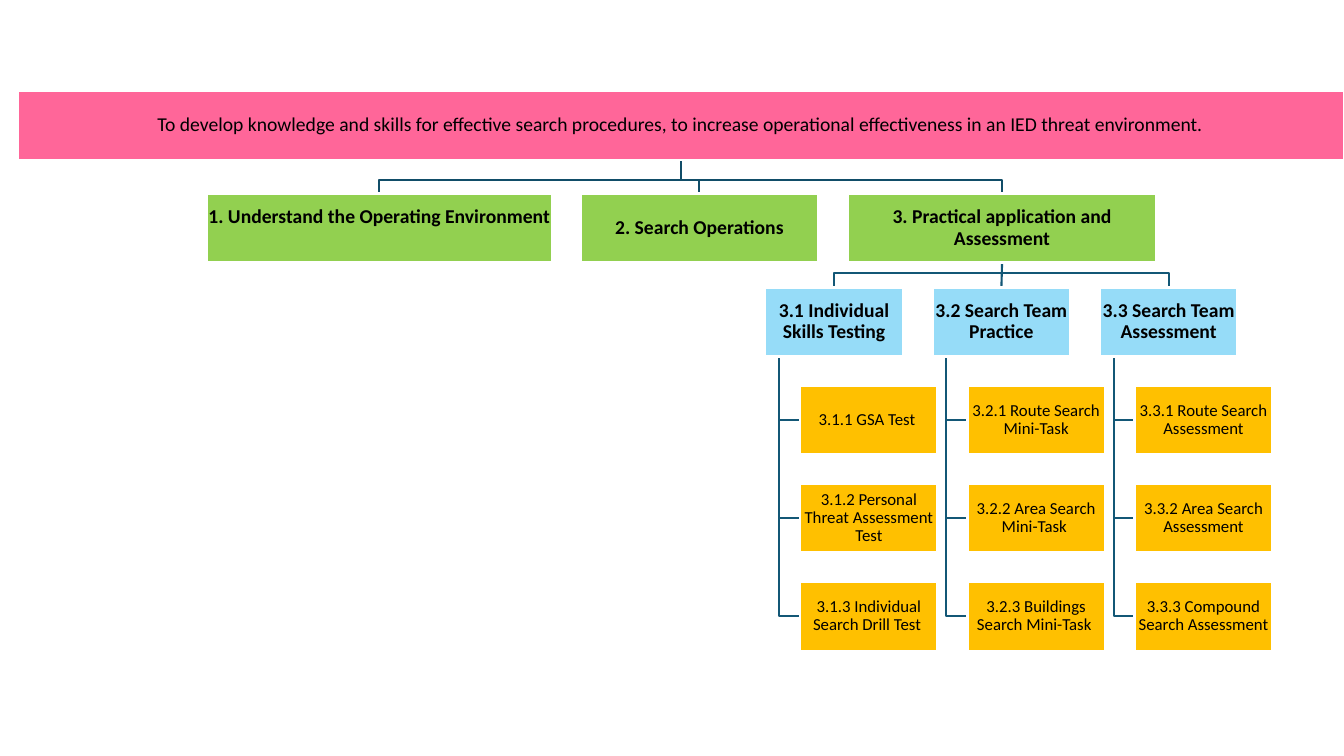
from dataclasses import dataclass, field

from lxml.etree import SubElement
from pptx import Presentation
from pptx.dml.color import RGBColor
from pptx.enum.shapes import MSO_CONNECTOR, MSO_SHAPE
from pptx.enum.text import MSO_ANCHOR, PP_ALIGN
from pptx.oxml.ns import qn
from pptx.slide import Slide
from pptx.util import Pt

COLOURS = {
    "aim": "FF6699",
    "module": "92D050",
    "unit": "96DCF8",
    "task": "FFC000",
    "border": "FFFFFF",
    "text": "000000",
    "module_link": "114D68",
    "unit_link": "135776",
}
BOX_HEIGHT = 49.5
MODULE_TOP = 138.3
UNIT_TOP = 205.2
UNIT_LEFT = 546.5
UNIT_PITCH = 119.5
UNIT_WIDTH = 98.6
TASK_PITCH = 70.1
TASK_INDENT = 24.9
STEM_INDENT = 10
INSET = 0.7

Point = tuple[float, float]


@dataclass
class Node:
    text: str
    level: str
    left: float
    top: float
    width: float
    size: float = 14
    bold: bool = True
    lift: float = 0
    children: list["Node"] = field(default_factory=list)

    @property
    def centre(self) -> float:
        return self.left + self.width / 2

    @property
    def bottom(self) -> float:
        return self.top + BOX_HEIGHT


UNITS = [
    ("3.1 Individual Skills Testing", [
        "3.1.1 GSA Test ",
        "3.1.2 Personal Threat Assessment Test",
        "3.1.3 Individual Search Drill Test ",
    ]),
    ("3.2 Search Team Practice", [
        "3.2.1 Route Search Mini-Task",
        "3.2.2 Area Search Mini-Task ",
        "3.2.3 Buildings Search Mini-Task ",
    ]),
    ("3.3 Search Team Assessment", [
        "3.3.1 Route Search Assessment",
        "3.3.2 Area Search Assessment",
        "3.3.3 Compound Search Assessment",
    ]),
]


def build_unit(column: int, title: str, tasks: list[str]) -> Node:
    left = UNIT_LEFT + column * UNIT_PITCH
    return Node(title, "unit", left, UNIT_TOP, UNIT_WIDTH, children=[
        Node(task, "task", left + TASK_INDENT, UNIT_TOP + row * TASK_PITCH,
             UNIT_WIDTH, size=12, bold=False)
        for row, task in enumerate(tasks, start=1)
    ])


def build_tree() -> Node:
    units = [build_unit(column, *unit) for column, unit in enumerate(UNITS)]
    modules = [
        Node("1. Understand the Operating Environment", "module",
             147.3, MODULE_TOP, 247.4, lift=15.5),
        Node("2. Search Operations", "module", 414.7, MODULE_TOP, 169.9),
        Node("3. Practical application and Assessment", "module",
             605.4, MODULE_TOP, 220.8, children=units),
    ]
    aim = ("To develop knowledge and skills for effective search procedures, "
           "to increase operational effectiveness in an IED threat environment.")
    return Node(aim, "aim", 12.4, 64.8, 947.6, bold=False, children=modules)


def link_points(parent: Node, child: Node) -> list[Point]:
    """Route from a parent to its child: side stem for tasks, elbow otherwise."""
    if child.level == "task":
        stem = parent.left + STEM_INDENT
        middle = child.top + BOX_HEIGHT / 2
        return [(stem, parent.bottom), (stem, middle), (child.left, middle)]
    start, end = (parent.centre, parent.bottom), (child.centre, child.top)
    if abs(start[0] - end[0]) < 1:
        return [start, end]
    bend = child.top - 10
    return [start, (start[0], bend), (end[0], bend), end]


def draw_link(page: Slide, parent: Node, child: Node) -> None:
    points = [(Pt(x), Pt(y)) for x, y in link_points(parent, child)]
    if len(points) == 2:
        link = page.shapes.add_connector(
            MSO_CONNECTOR.STRAIGHT, *points[0], *points[1])
    else:
        builder = page.shapes.build_freeform(*points[0])
        builder.add_line_segments(points[1:], close=False)
        link = builder.convert_to_shape()
        link.fill.background()
    colour = "module_link" if child.level == "module" else "unit_link"
    link.line.color.rgb = RGBColor.from_string(COLOURS[colour])
    link.line.width = Pt(1.5)
    SubElement(link._element.spPr, qn("a:effectLst"))


def draw_box(page: Slide, node: Node) -> None:
    box = page.shapes.add_shape(
        MSO_SHAPE.RECTANGLE,
        Pt(node.left), Pt(node.top), Pt(node.width), Pt(BOX_HEIGHT))
    box.shadow.inherit = False
    box.fill.solid()
    box.fill.fore_color.rgb = RGBColor.from_string(COLOURS[node.level])
    box.line.color.rgb = RGBColor.from_string(COLOURS["border"])
    box.line.width = Pt(2)
    frame = box.text_frame
    frame.word_wrap = True
    frame.vertical_anchor = MSO_ANCHOR.MIDDLE
    frame.margin_left = frame.margin_right = frame.margin_top = Pt(INSET)
    frame.margin_bottom = Pt(INSET + node.lift)
    para = frame.paragraphs[0]
    para.text = node.text
    para.alignment = PP_ALIGN.CENTER
    para.line_spacing = 0.9
    para.font.name = "Calibri"
    para.font.size = Pt(node.size)
    para.font.bold = node.bold
    para.font.color.rgb = RGBColor.from_string(COLOURS["text"])


def draw_tree(page: Slide, node: Node) -> None:
    """Draw the links below a node, then its box and its branches."""
    for child in node.children:
        draw_link(page, node, child)
    draw_box(page, node)
    for child in node.children:
        draw_tree(page, child)


def main() -> None:
    deck = Presentation()
    deck.slide_width, deck.slide_height = Pt(960), Pt(540)
    page = deck.slides.add_slide(deck.slide_layouts[6])
    draw_tree(page, build_tree())
    deck.save("out.pptx")


if __name__ == "__main__":
    main()
